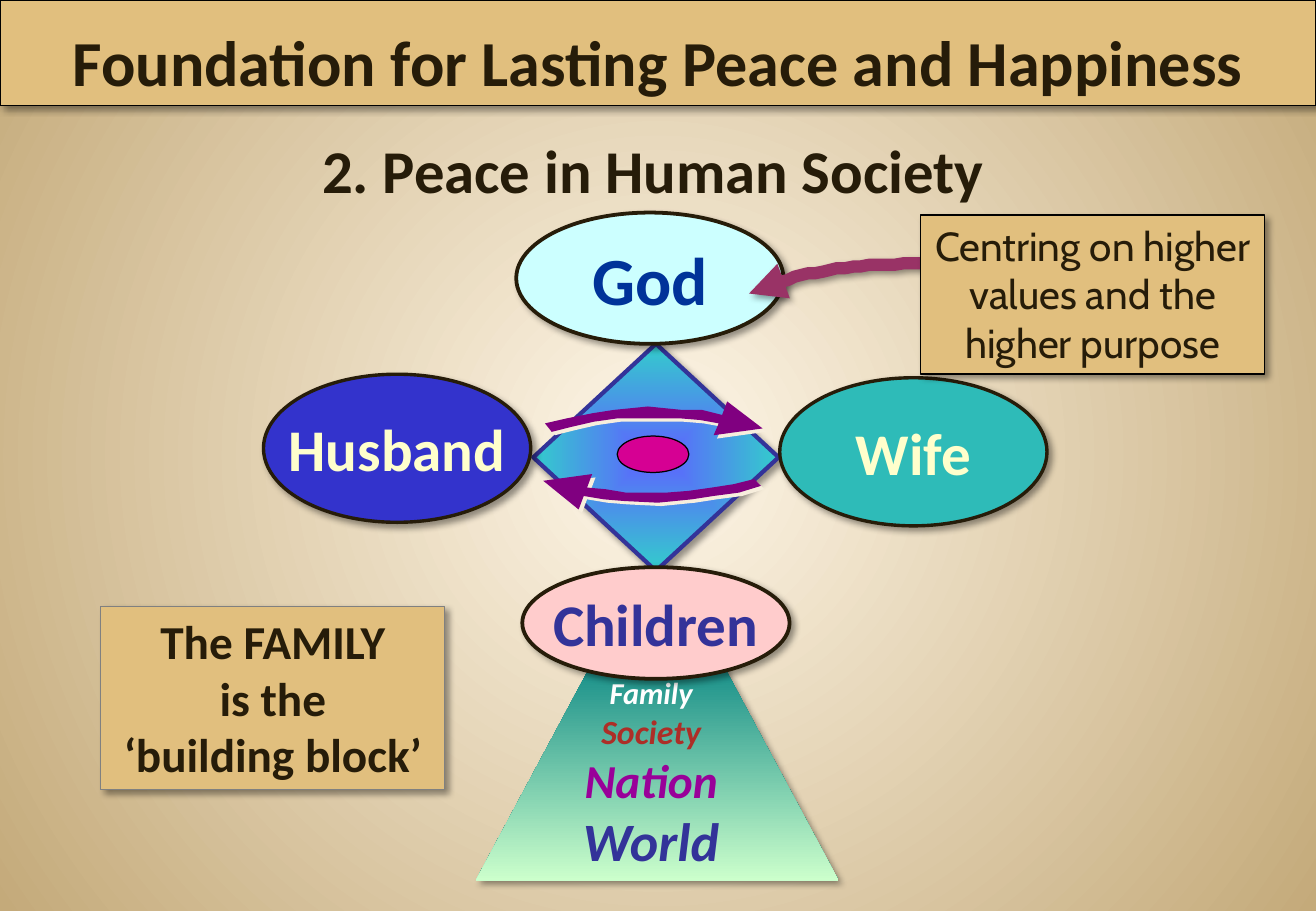
from dataclasses import dataclass

from lxml.etree import SubElement
from pptx import Presentation
from pptx.dml.color import RGBColor
from pptx.enum.shapes import MSO_SHAPE
from pptx.enum.text import MSO_ANCHOR, PP_ALIGN
from pptx.oxml.ns import qn
from pptx.util import Pt


@dataclass(frozen=True)
class Theme:
    ink: str = "261C09"
    tan: str = "E1BF7E"
    black: str = "000000"
    gray: str = "808080"
    white: str = "FFFFFF"
    cream: str = "FFFFCC"
    glow: str = "F7EEDD"
    light: str = "FFF7E8"
    sand: str = "C4AA7A"
    navy: str = "003399"
    blue: str = "333399"
    royal: str = "3333CC"
    azure: str = "5D64FF"
    aqua: str = "33CCCC"
    sea: str = "2EBBB8"
    sky: str = "CCFFFF"
    pink: str = "FFCCCC"
    rose: str = "D60093"
    wine: str = "993366"
    plum: str = "800080"
    grape: str = "990099"
    red: str = "AD2E27"
    teal: str = "008080"
    mint: str = "CCFFCC"
    title: int = 38
    head: int = 36
    top: int = 40
    role: int = 35
    note: int = 28
    body: int = 24
    steps: tuple = (18, 20, 28, 32)


THEME = Theme()
MID = {side: "50000" for side in "ltrb"}
ARROW = [
    (426.2, 250.6), (414.7, 249.1), (403.2, 247.7), (379.4, 247.7),
    (365.8, 248.4), (352.1, 249.8), (339.1, 252.7), (326.9, 255.6),
    (323.3, 251.3), (336.2, 247.7), (350.6, 244.8), (364.3, 243.4),
    (384.5, 241.2), (403.9, 242.6), (416.2, 243.4), (428.4, 245.5),
    (431.3, 237.6), (452.2, 254.2), (422.6, 258.5),
]


def rgb(color):
    return RGBColor.from_string(color)


def blend(item, fill, pair, kind=None):
    fill.gradient()
    for stop, color in zip(fill.gradient_stops, pair):
        stop.color.rgb = rgb(color)
    node = next(item.element.iter(qn("a:gradFill")))
    line = node.find(qn("a:lin"))
    if kind:
        node.remove(line)
        path = SubElement(node, qn("a:path"), path=kind)
        SubElement(path, qn("a:fillToRect"), MID)
    else:
        line.set("ang", "5400000")


def shade(shape, color=THEME.black, alpha=40, blur=4, dist=3):
    effect = shape.element.spPr.find(qn("a:effectLst"))
    outer = SubElement(
        effect, qn("a:outerShdw"), blurRad=str(Pt(blur)), dist=str(Pt(dist)),
        dir="2700000", algn="ctr", rotWithShape="0")
    tint = SubElement(outer, qn("a:srgbClr"), val=color)
    SubElement(tint, qn("a:alpha"), val=str(alpha * 1000))


def paint(shape, fill=None, line=None, width=0.75):
    if fill:
        shape.fill.solid()
        shape.fill.fore_color.rgb = rgb(fill)
    else:
        shape.fill.background()
    if line:
        shape.line.color.rgb = rgb(line)
        shape.line.width = Pt(width)
    else:
        shape.line.fill.background()
    shape.shadow.inherit = False
    return shape


def form(slide, kind, box, fill=None, line=None, width=0.75):
    shape = slide.shapes.add_shape(kind, *map(Pt, box))
    return paint(shape, fill, line, width)


def trace(slide, points, close=True):
    pen = slide.shapes.build_freeform(*points[0], scale=Pt(1))
    pen.add_line_segments(points[1:], close=close)
    return pen.convert_to_shape()


def write(shape, text, size, color=THEME.ink, font="Calibri", bold=True,
          italic=False, wrap=True, anchor=MSO_ANCHOR.TOP):
    frame = shape.text_frame
    frame.word_wrap = wrap
    frame.vertical_anchor = anchor
    para = frame.add_paragraph() if frame.text else frame.paragraphs[0]
    para.alignment = PP_ALIGN.CENTER
    run = para.add_run()
    run.text = text
    run.font.name = font
    run.font.size = Pt(size)
    run.font.bold = bold
    run.font.italic = italic
    run.font.color.rgb = rgb(color)


def role(slide, name, box, fill, color, size=THEME.role, width=2.25):
    shape = form(slide, MSO_SHAPE.OVAL, box, fill, THEME.ink, width)
    shade(shape)
    write(shape, name, size, color, wrap=False, anchor=MSO_ANCHOR.MIDDLE)


def panel(slide, box, line=THEME.black):
    shape = form(slide, MSO_SHAPE.RECTANGLE, box, THEME.tan, line)
    shade(shape)
    return shape


def label(slide, box):
    return slide.shapes.add_textbox(*map(Pt, box))


def tower(slide):
    shape = paint(trace(slide, [
        (496.8, 522), (419.8, 378), (358.6, 378), (282.2, 522)]))
    blend(shape, shape.fill, (THEME.teal, THEME.mint))
    shade(shape)
    names = ("Family", "Society", "Nation", "World")
    colors = (THEME.white, THEME.red, THEME.grape, THEME.blue)
    words = label(slide, (329.8, 396, 112.3, 126))
    for name, size, color in zip(names, THEME.steps, colors):
        write(words, name, size, color, italic=True)


def core(slide):
    shape = form(slide, MSO_SHAPE.DIAMOND, (316.1, 203.8, 145.4, 134.6),
                 line=THEME.blue, width=2.5)
    blend(shape, shape.fill, (THEME.azure, THEME.aqua), "shape")
    shade(shape)


def cycle(slide):
    form(slide, MSO_SHAPE.OVAL, (365.8, 258.5, 42.5, 21.6),
         THEME.rose, THEME.black)
    back = [(774 - x, 539.3 - y) for x, y in ARROW]
    for points in (ARROW, back):
        shade(paint(trace(slide, points), THEME.plum),
              THEME.glow, alpha=100, blur=0, dist=2.8)


def curve(ends, count=24):
    def spot(t, a, b, c, d):
        u = 1 - t
        return u**3 * a + 3 * u * u * t * b + 3 * u * t * t * c + t**3 * d
    return [tuple(spot(i / count, *axis) for axis in zip(*ends))
            for i in range(count + 1)]


def pointer(slide):
    ends = [(444.2, 174.2), (474, 160.5), (506, 156.2), (552.2, 156.2)]
    shape = paint(trace(slide, curve(ends), close=False),
                  line=THEME.wine, width=7.25)
    SubElement(shape.element.spPr.find(qn("a:ln")), qn("a:headEnd"),
               type="triangle")
    shade(shape)


def main():
    deck = Presentation()
    deck.slide_width, deck.slide_height = Pt(780), Pt(540)
    slide = deck.slides.add_slide(deck.slide_layouts[6])
    blend(slide, slide.background.fill, (THEME.light, THEME.sand), "circle")
    tower(slide)
    core(slide)
    role(slide, "Husband", (156.2, 221.8, 158.4, 87.8),
         THEME.royal, THEME.cream, width=2)
    role(slide, "Wife", (462.2, 223.9, 158.4, 87.8),
         THEME.sea, THEME.cream, width=2)
    role(slide, "God", (306, 126, 158.4, 77.8),
         THEME.sky, THEME.navy, size=THEME.top)
    write(label(slide, (162, 74.9, 450, 51.1)),
          "2. Peace in Human Society", THEME.head)
    role(slide, "Children", (309.6, 336.2, 158.4, 66.2),
         THEME.pink, THEME.blue)
    cycle(slide)
    write(panel(slide, (0, 0, 780, 62.6)),
          "Foundation for Lasting Peace and Happiness", THEME.title,
          anchor=MSO_ANCHOR.BOTTOM)
    block = panel(slide, (59.8, 359.3, 203.8, 108.7), THEME.gray)
    for text in ("The FAMILY", "is the", "‘building block’"):
        write(block, text, THEME.note)
    pointer(slide)
    write(panel(slide, (545.8, 127.4, 203.8, 94.3)),
          "Centring on higher values and the higher purpose", THEME.body,
          font="Cabin", bold=False)
    deck.save("out.pptx")


if __name__ == "__main__":
    main()
